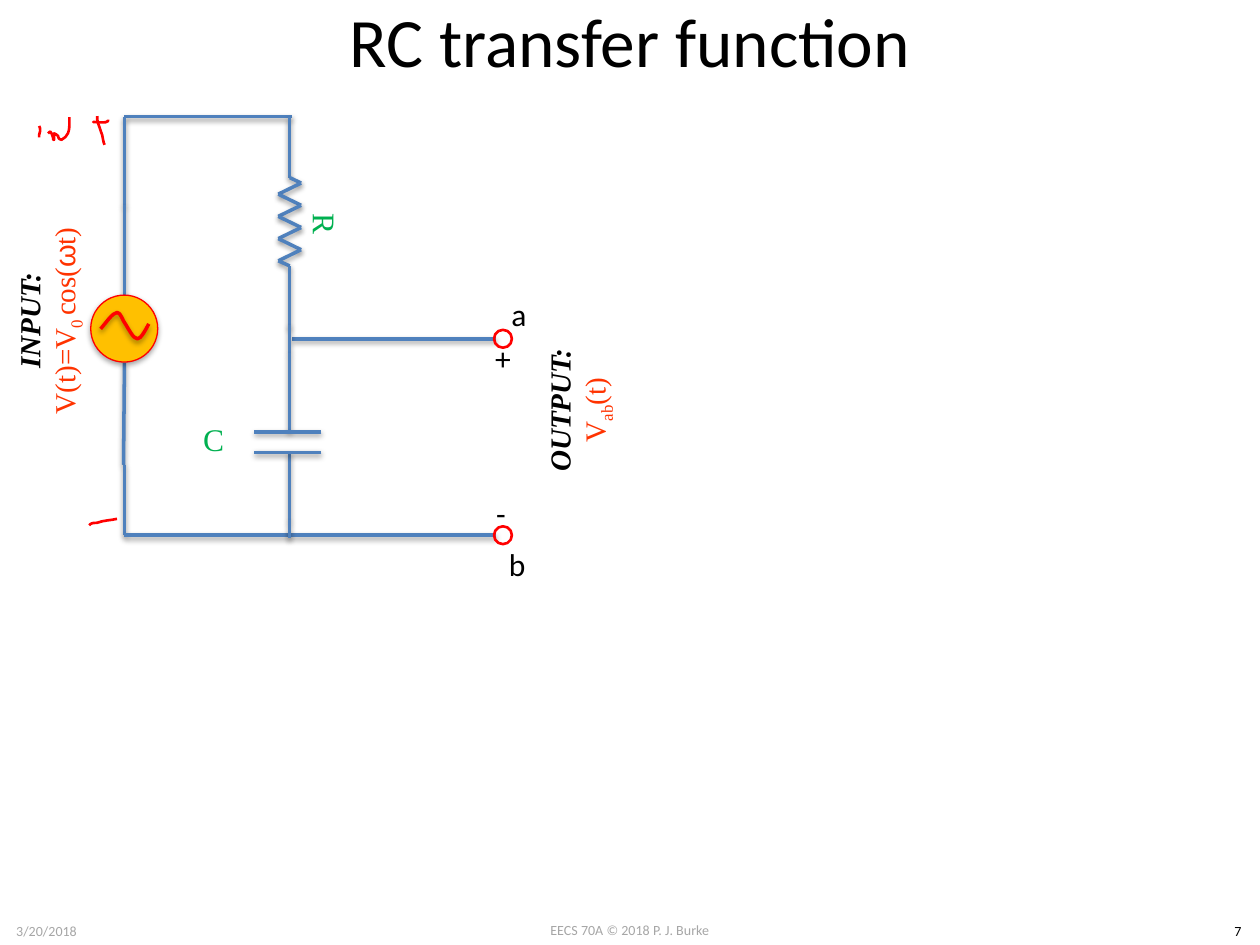
"""Build a slide showing the RC transfer function circuit."""
import pptx
import pptx.util
import pptx.dml.color
import pptx.enum.shapes
import pptx.enum.text
import pptx.oxml
import pptx.oxml.ns

Cm = pptx.util.Cm
Pt = pptx.util.Pt
ALIGN = pptx.enum.text.PP_ALIGN
ANCHOR = pptx.enum.text.MSO_ANCHOR
AUTO_SIZE = pptx.enum.text.MSO_AUTO_SIZE

BLUE, RED, AMBER = "4F81BD", "FF0000", "FFC000"
GREEN, ORANGE, GREY, BLACK = "00B050", "FF3300", "A6A6A6", "000000"
SERIF = "Times New Roman"

TITLE = "RC transfer function"
HEADING = {"bold": True, "italic": True, "indent": -0.29}
FORMULA = {"color": ORANGE}
SUBSCRIPT = {"color": ORANGE, "baseline": -25000}
INPUT = [
    [("INPUT:", HEADING)],
    [("V(t)=V", FORMULA), ("0 ", SUBSCRIPT), ("cos(", FORMULA),
     ("ω", {"color": ORANGE, "font": "Arial"}), ("t)", FORMULA)],
]
OUTPUT = [
    [("OUTPUT:", HEADING)],
    [("V", FORMULA), ("ab", SUBSCRIPT), ("(t)", FORMULA)],
]
FOOTERS = [
    ("EECS 70A © 2018 P. J. Burke", (9.74, 18.45, 5.92, 0.61), GREY),
    ("3/20/2018", (0, 18.47, 1.88, 0.61), GREY),
    ("7", (24.51, 18.47, 0.89, 0.61), BLACK),
]
TERMINAL_LABELS = [
    ("a", (10.06, 5.82, 0.81, 1.02)),
    ("b", (10.01, 10.87, 0.86, 1.02)),
    ("+", (9.73, 6.71, 0.84, 1.02)),
    ("-", (9.75, 9.83, 0.71, 1.02)),
]
CIRCUIT_LABELS = [
    (INPUT, (-1.7, 5.69, 5.36, 1.55), 16.6, BLACK, 270),
    (OUTPUT, (8.99, 7.49, 5.36, 1.55), 16.6, BLACK, 270),
    ("C", (2.8, 7.93, 3.02, 1.85), 18, GREEN, 0),
    ("R", (5.05, 3.59, 3.02, 1.85), 18, GREEN, 90),
]

LEFT, BRANCH, TERMINAL = 2.51, 5.84, 10
TOP, TAP, BOTTOM = 2.35, 6.83, 10.79
ZIGZAG = [(6.07 if i % 2 == 0 else 5.61, 3.69 + 0.224 * i) for i in range(8)]
WIRES = [
    [(5.89, TOP), (LEFT, TOP), (LEFT, 4.14), (LEFT, 5.94)],
    [(LEFT, 7.31), (2.49, 9.37)],
    [(LEFT, 9.37), (LEFT, BOTTOM), (BRANCH, BOTTOM), (TERMINAL, BOTTOM)],
    [(5.89, TAP), (TERMINAL, TAP)],
    [(BRANCH, TOP), (BRANCH, 3.58), *ZIGZAG, (BRANCH, 5.36), (BRANCH, 6.6)],
    [(BRANCH, 6.55), (BRANCH, 7.11), (BRANCH, 8.71)],
    [(BRANCH, 9.12), (BRANCH, 10.49), (BRANCH, 10.85)],
    [(6.48, 8.71), (5.13, 8.71)],
    [(6.48, 9.12), (5.13, 9.12)],
]

SINE = [[(2.03, 6.63), (2.16, 6.48), (2.26, 6.32), (2.36, 6.3), (2.44, 6.3), (2.46, 6.45),
         (2.54, 6.55), (2.59, 6.63), (2.69, 6.83), (2.77, 6.83), (2.84, 6.83), (2.92, 6.68),
         (3, 6.53)]]
HANDWRITING = [
    [[(0.79, 2.54), (0.81, 2.57), (0.81, 2.59), (0.81, 2.64), (0.81, 2.69), (0.81, 2.69),
      (0.79, 2.72), (0.79, 2.74), (0.79, 2.77), (0.79, 2.77)],
     [(0.97, 2.69), (1.02, 2.64), (1.02, 2.64), (1.04, 2.69), (1.07, 2.72), (1.07, 2.72),
      (1.07, 2.77), (1.07, 2.82), (1.07, 2.82), (1.09, 2.82), (1.09, 2.77), (1.09, 2.74),
      (1.09, 2.69), (1.12, 2.69), (1.14, 2.72), (1.17, 2.74), (1.19, 2.82), (1.19, 2.79),
      (1.24, 2.82), (1.3, 2.79), (1.35, 2.74), (1.37, 2.69), (1.4, 2.62), (1.4, 2.54),
      (1.4, 2.46), (1.4, 2.44), (1.4, 2.39), (1.4, 2.36)]],
    [[(1.93, 2.46), (1.91, 2.46), (1.91, 2.46), (1.88, 2.46), (1.93, 2.46), (2.16, 2.49),
      (2.18, 2.44), (2.18, 2.41), (2.18, 2.41), (2.18, 2.41)],
     [(1.96, 2.34), (1.96, 2.39), (1.96, 2.44), (1.98, 2.49), (2.01, 2.57), (2.03, 2.64),
      (2.06, 2.72), (2.08, 2.79), (2.08, 2.87), (2.11, 2.92)]],
    [[(1.8, 10.59), (1.83, 10.54), (1.91, 10.54), (1.96, 10.54), (2.08, 10.49), (2.24, 10.49),
      (2.36, 10.46)]],
]


def rgb(color):
    return pptx.dml.color.RGBColor.from_string(color)


def fill_text(frame, content, size=18, color=BLACK, font="Calibri", align=ALIGN.CENTER):
    """Write a string, or paragraphs of (text, format) runs, into a text frame."""
    paragraphs = [[(content, {})]] if isinstance(content, str) else content
    for index, runs in enumerate(paragraphs):
        paragraph = frame.paragraphs[0] if index == 0 else frame.add_paragraph()
        paragraph.alignment = align
        for text, style in runs:
            run = paragraph.add_run()
            run.text = text
            run.font.size = Pt(size)
            run.font.name = style.get("font", font)
            run.font.color.rgb = rgb(style.get("color", color))
            run.font.bold = style.get("bold", False)
            run.font.italic = style.get("italic", False)
            if "baseline" in style:
                run.font._element.set("baseline", str(style["baseline"]))
            if "indent" in style:
                properties = paragraph._p.get_or_add_pPr()
                properties.set("marL", "0")
                properties.set("indent", str(int(Cm(style["indent"]))))


def add_text(slide, content, box, rotation=0, wrap=True, anchor=ANCHOR.MIDDLE, **style):
    shape = slide.shapes.add_textbox(*map(Cm, box))
    shape.rotation = rotation
    shape.text_frame.word_wrap = wrap
    shape.text_frame.vertical_anchor = anchor
    if not wrap:
        shape.text_frame.auto_size = AUTO_SIZE.SHAPE_TO_FIT_TEXT
    fill_text(shape.text_frame, content, **style)


def finish(shape, color, width, shadow=0):
    """Set the line and the shadow opacity in percent, 0 for no shadow."""
    shape.line.color.rgb = rgb(color)
    shape.line.width = Pt(width)
    outer = (
        '<a:outerShdw blurRad="39370" dist="20320" dir="5400000" rotWithShape="0">'
        f'<a:srgbClr val="000000"><a:alpha val="{shadow * 1000}"/></a:srgbClr></a:outerShdw>'
    ) if shadow else ""
    namespace = pptx.oxml.ns.nsdecls("a")
    effects = pptx.oxml.parse_xml(f"<a:effectLst {namespace}>{outer}</a:effectLst>")
    shape._element.spPr.append(effects)


def add_wire(slide, points):
    straight = pptx.enum.shapes.MSO_CONNECTOR.STRAIGHT
    for start, end in zip(points, points[1:]):
        wire = slide.shapes.add_connector(straight, *map(Cm, start + end))
        finish(wire, BLUE, 2, shadow=38)


def add_circle(slide, left, top, diameter, width, fill=None, shadow=0):
    oval = pptx.enum.shapes.MSO_SHAPE.OVAL
    circle = slide.shapes.add_shape(oval, *map(Cm, (left, top, diameter, diameter)))
    if fill:
        circle.fill.solid()
        circle.fill.fore_color.rgb = rgb(fill)
    else:
        circle.fill.background()
    finish(circle, RED, width, shadow)


def add_strokes(slide, strokes, width, shadow=0):
    """Draw strokes given as a start point and three control points per cubic curve."""
    curves = [[tuple(map(Cm, point)) for point in stroke] for stroke in strokes]
    builder = slide.shapes.build_freeform(*curves[0][0])
    for index, curve in enumerate(curves):
        if index:
            builder.move_to(*curve[0])
        builder.add_line_segments(curve[1:], close=False)
    shape = builder.convert_to_shape()
    segments = shape._element.xpath(".//a:lnTo")
    for first in range(0, len(segments), 3):
        cubic = pptx.oxml.parse_xml(f"<a:cubicBezTo {pptx.oxml.ns.nsdecls('a')}/>")
        segments[first].addprevious(cubic)
        for segment in segments[first:first + 3]:
            cubic.append(segment[0])
            segment.getparent().remove(segment)
    shape.fill.background()
    finish(shape, RED, width, shadow)


def main():
    presentation = pptx.Presentation()
    presentation.slide_width, presentation.slide_height = Cm(25.4), Cm(19.05)
    slide = presentation.slides.add_slide(presentation.slide_layouts[5])
    title = slide.shapes.title
    title.left, title.top, title.width, title.height = map(Cm, (1.27, 0, 22.86, 1.59))
    title.text_frame.auto_size = AUTO_SIZE.NONE
    title.text_frame.vertical_anchor = ANCHOR.MIDDLE
    fill_text(title.text_frame, TITLE, size=39.6)

    for text, box, color in FOOTERS:
        add_text(slide, text, box, wrap=False, anchor=ANCHOR.TOP, size=8, color=color)
    for points in WIRES:
        add_wire(slide, points)
    add_circle(slide, 1.83, 5.95, 1.35, 0.75, fill=AMBER, shadow=35)
    add_strokes(slide, SINE, 2, shadow=38)
    for level in (TAP, BOTTOM):
        add_circle(slide, 9.96, level - 0.18, 0.36, 1.5)
    for text, box in TERMINAL_LABELS:
        add_text(slide, text, box, wrap=False, anchor=ANCHOR.TOP, align=ALIGN.LEFT)
    for content, box, size, color, rotation in CIRCUIT_LABELS:
        add_text(slide, content, box, rotation=rotation, size=size, color=color, font=SERIF)
    for strokes in HANDWRITING:
        add_strokes(slide, strokes, 1.5)
    presentation.save("out.pptx")


if __name__ == "__main__":
    main()
